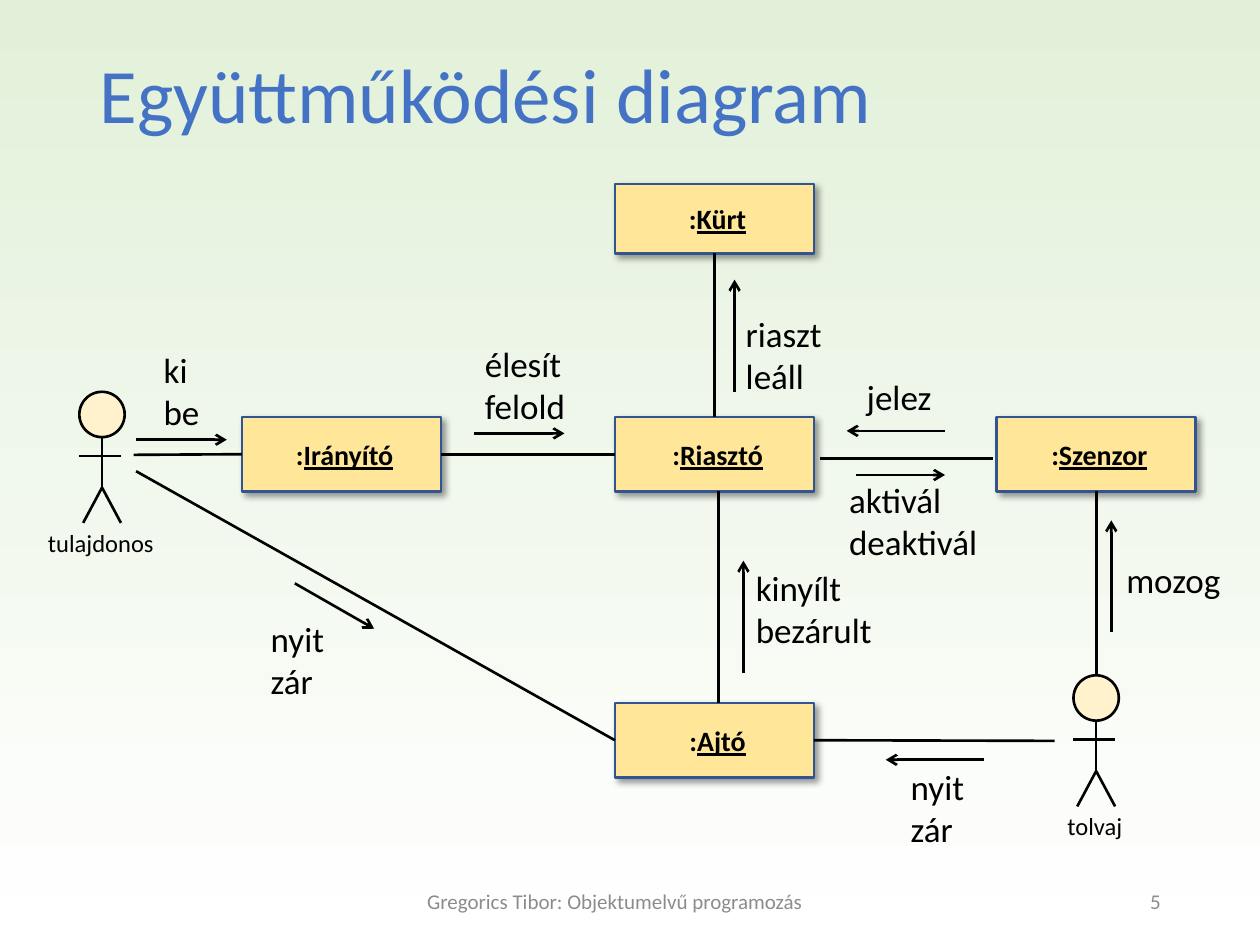
from pptx import Presentation
from pptx import util as u
from pptx.dml.color import RGBColor
from pptx.enum import shapes, text
from pptx.oxml import parse_xml
from pptx.oxml.ns import nsdecls

BLACK = "000000"
SHADOW = (
    f'<a:outerShdw {nsdecls("a")} blurRad="50800" dist="38100" dir="2700000" algn="tl" rotWithShape="0">'
    '<a:srgbClr val="000000"><a:alpha val="40000"/></a:srgbClr></a:outerShdw>'
)

OBJECTS = {
    "Kürt": (4.88, 1.46, 0.55),
    "Irányító": (1.92, 3.31, 0.59),
    "Riasztó": (4.88, 3.31, 0.59),
    "Szenzor": (7.91, 3.31, 0.59),
    "Ajtó": (4.88, 5.58, 0.59),
}
MESSAGES = [
    (1.2, 2.72, 0.49, ["ki", "be"]),
    (3.75, 2.67, 0.84, ["élesít", "felold"]),
    (5.82, 2.43, 0.81, ["riaszt", "leáll"]),
    (6.78, 2.93, 0.72, ["jelez"]),
    (6.64, 3.75, 1.23, ["aktivál", "deaktivál"]),
    (5.9, 4.45, 1.13, ["kinyílt", "bezárult"]),
    (8.84, 4.38, 0.95, ["mozog"]),
    (2.05, 4.85, 0.63, ["nyit", "zár"]),
    (7.13, 6.03, 0.63, ["nyit", "zár"]),
]
ARROWS = [
    (1.08, 3.49, 1.8, 3.49),
    (3.76, 3.44, 4.48, 3.44),
    (5.83, 3.11, 5.83, 2.22),
    (7.5, 3.42, 6.72, 3.42),
    (6.79, 3.77, 7.5, 3.77),
    (5.9, 5.34, 5.9, 4.45),
    (8.82, 5.02, 8.82, 4.13),
    (2.34, 4.63, 2.97, 4.99),
    (7.81, 6.03, 7.03, 6.03),
]


def rgb(value):
    return RGBColor.from_string(value)


def format_font(font, color=BLACK, **values):
    for name, value in {"name": "Calibri", **values}.items():
        setattr(font, name, value)
    font.color.rgb = rgb(color)


def add_run(p, content, size, **values):
    r = p.add_run()
    r.text = content
    format_font(r.font, size=u.Pt(size), **values)


def add_text(s, box, lines, size=20, align=text.PP_ALIGN.LEFT, color=BLACK, **frame):
    sp = s.shapes.add_textbox(*map(u.Inches, box))
    tf = sp.text_frame
    for name, value in {"word_wrap": False, **frame}.items():
        setattr(tf, name, value)
    for i, line in enumerate(lines):
        p = tf.add_paragraph() if i else tf.paragraphs[0]
        p.alignment = align
        add_run(p, line, size, color=color)


def add_message(s, left, top, width, lines):
    add_text(s, (left, top, width, 0.1 + 0.335 * len(lines)), lines)


def add_line(s, x1, y1, x2, y2, begin=None, end=None, arrow=False):
    c = s.shapes.add_connector(shapes.MSO_CONNECTOR.STRAIGHT, *map(u.Inches, (x1, y1, x2, y2)))
    c.line.color.rgb = rgb(BLACK)
    c.line.width = u.Pt(1.5)
    if arrow:
        c.line._get_or_add_ln().append(parse_xml(f'<a:tailEnd {nsdecls("a")} type="arrow"/>'))
    c._element.spPr.append(parse_xml(f'<a:effectLst {nsdecls("a")}/>'))
    if begin:
        c.begin_connect(*begin)
    if end:
        c.end_connect(*end)


def add_shape(s, kind, box, fill, line):
    sp = s.shapes.add_shape(kind, *map(u.Inches, box))
    sp.shadow.inherit = False
    sp.fill.solid()
    sp.fill.fore_color.rgb = rgb(fill)
    sp.line.color.rgb = rgb(line)
    sp.line.width = u.Pt(1.5)
    return sp


def add_object(s, name, left, top, height):
    sp = add_shape(s, shapes.MSO_SHAPE.RECTANGLE, (left, top, 1.58, height), "FFE699", "325491")
    sp._element.spPr.find("{*}effectLst").append(parse_xml(SHADOW))
    tf = sp.text_frame
    tf.vertical_anchor = text.MSO_ANCHOR.MIDDLE
    p = tf.paragraphs[0]
    p.alignment = text.PP_ALIGN.CENTER
    add_run(p, " :", 16, bold=True)
    add_run(p, name, 16, bold=True, underline=True)
    return sp


def add_actor(s, name, left, top, label_width):
    center, hip, foot = left + 0.18, top + 0.76, top + 1.04
    add_line(s, center, top + 0.36, center, hip)
    for side in (-0.15, 0.15):
        add_line(s, center, hip, center + side, foot)
    add_line(s, left, top + 0.51, left + 0.33, top + 0.51)
    head = add_shape(s, shapes.MSO_SHAPE.OVAL, (left, top, 0.36, 0.36), "FFF2CC", BLACK)
    box = (center - 0.01 - label_width / 2, top + 1.03, label_width, 0.34)
    add_text(s, box, [name], 14, text.PP_ALIGN.CENTER)
    return head


def add_title(s, content):
    sp = s.shapes.title
    box = {"left": 0.69, "top": 0.4, "width": 8.62, "height": 1.45}
    for name, value in box.items():
        setattr(sp, name, u.Inches(value))
    tf = sp.text_frame
    tf.auto_size = text.MSO_AUTO_SIZE.NONE
    tf.vertical_anchor = text.MSO_ANCHOR.TOP
    p = tf.paragraphs[0]
    p.alignment = text.PP_ALIGN.LEFT
    p.line_spacing = 0.9
    add_run(p, content, 44, color="4472C4")


def set_background(s):
    fill = s.background.fill
    fill.gradient()
    fill.gradient_angle = 90
    for stop, color, position in zip(fill.gradient_stops, ("FFFFFF", "E2F0D9"), (0, 1)):
        stop.color.rgb = rgb(color)
        stop.position = position


def add_links(s, obj, thief):
    add_line(s, 5.67, 2.01, 5.67, 3.31, (obj["Kürt"], 2), (obj["Riasztó"], 0))
    add_line(s, 3.5, 3.61, 4.88, 3.61, (obj["Irányító"], 3), (obj["Riasztó"], 1))
    add_line(s, 1.06, 3.61, 1.92, 3.61, end=(obj["Irányító"], 1))
    add_line(s, 1.08, 3.74, 4.88, 5.88, end=(obj["Ajtó"], 1))
    add_line(s, 6.46, 5.88, 8.37, 5.88, begin=(obj["Ajtó"], 3))
    add_line(s, 8.7, 3.9, 8.7, 5.36, (obj["Szenzor"], 2), (thief, 0))
    add_line(s, 6.51, 3.64, 7.88, 3.64)
    add_line(s, 5.7, 3.9, 5.7, 5.58)


def main():
    prs = Presentation()
    prs.slide_width, prs.slide_height = u.Inches(10), u.Inches(7.5)
    s = prs.slides.add_slide(prs.slide_layouts[5])
    set_background(s)
    add_title(s, "Együttműködési diagram")
    obj = {name: add_object(s, name, *place) for name, place in OBJECTS.items()}
    add_actor(s, "tulajdonos", 0.63, 3.11, 1.05)
    thief = add_actor(s, "tolvaj", 8.52, 5.36, 0.64)
    add_links(s, obj, thief)
    for arrow in ARROWS:
        add_line(s, *arrow, arrow=True)
    for message in MESSAGES:
        add_message(s, *message)
    footer = {"size": 12, "color": "8C8C8C", "word_wrap": True, "vertical_anchor": text.MSO_ANCHOR.MIDDLE}
    add_text(s, (2.66, 6.95, 4.44, 0.4), ["Gregorics Tibor: Objektumelvű programozás"],
             align=text.PP_ALIGN.CENTER, **footer)
    add_text(s, (7.06, 6.95, 2.25, 0.4), ["5"], align=text.PP_ALIGN.RIGHT, **footer)
    prs.save("out.pptx")


if __name__ == "__main__":
    main()
